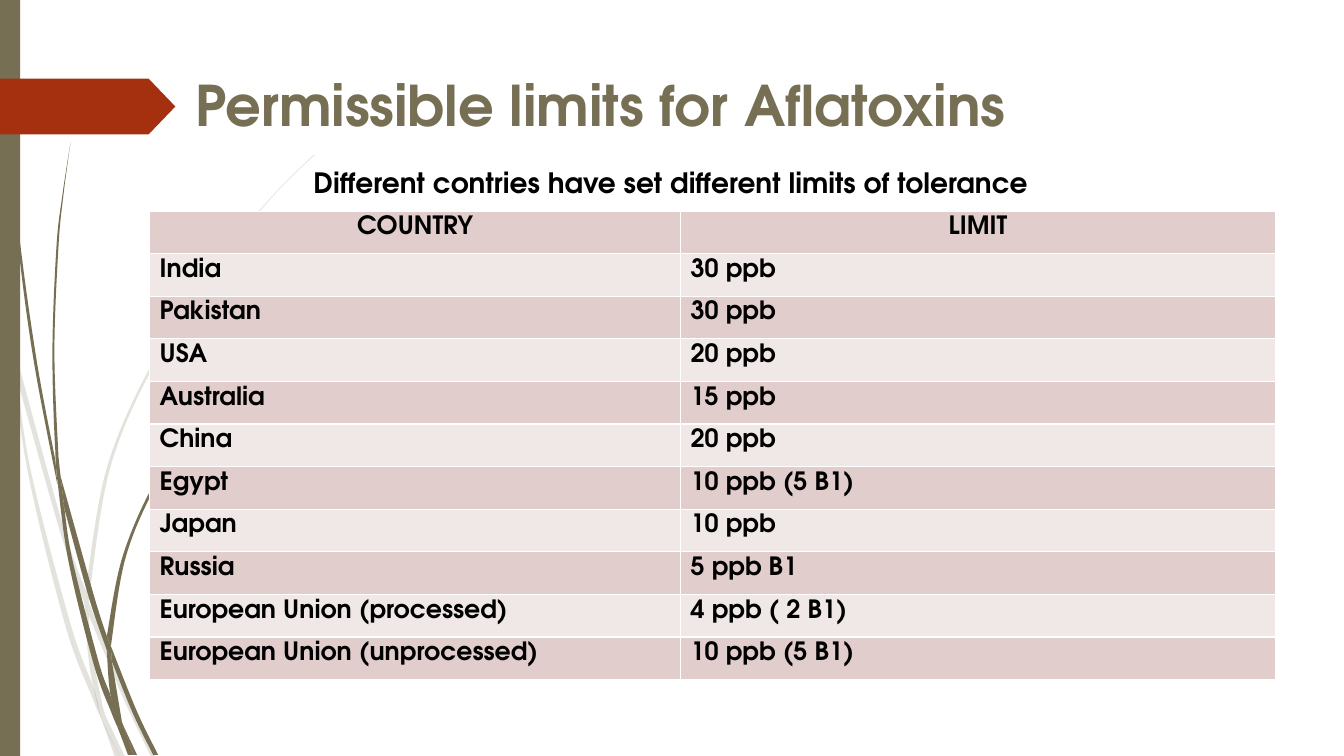
import lxml.etree
import pptx
import pptx.dml.color
import pptx.enum.shapes
import pptx.enum.text
import pptx.oxml
import pptx.oxml.ns
import pptx.util
from pptx.util import Cm

OLIVE = pptx.dml.color.RGBColor(0x76, 0x6F, 0x54)
RUST = pptx.dml.color.RGBColor(0xA5, 0x30, 0x10)
BLACK = pptx.dml.color.RGBColor(0x00, 0x00, 0x00)
ROSE = pptx.dml.color.RGBColor(0xE1, 0xCD, 0xCC)
PALE_ROSE = pptx.dml.color.RGBColor(0xF0, 0xE8, 0xE7)
FONT = "TeX Gyre Adventor"

GRASS_UNIT = Cm(0.0254)

PALE_BLADES = [
    ([(11, 350), (9, 322), (0, 282)], [(0, 299), (10, 344)]),
    ([(17, 376), (58, 522), (84, 599)], [(85, 586), (62, 520), (14, 345)]),
    ([(88, 610), (123, 694), (150, 751)], [(155, 751), (127, 692), (92, 607), (88, 596)]),
    ([(119, 751)], [(124, 751), (105, 711)]),
    ([(11, 350), (28, 470), (65, 621), (92, 693), (101, 714)],
     [(99, 707), (93, 683), (70, 619), (31, 469), (17, 376)]),
    ([(84, 599), (87, 646), (93, 683), (105, 711)], [(103, 706), (91, 646), (88, 608)]),
    ([(312, 153), (289, 175), (268, 197), (228, 244), (158, 348), (107, 461), (85, 586)],
     [(88, 596), (110, 462), (160, 349), (229, 245), (268, 198), (290, 175), (312, 154)]),
    ([(101, 714), (114, 751)], [(119, 751)]),
    ([(88, 608), (88, 596)], [(85, 586), (84, 599)]),
    ([(93, 683), (101, 714), (119, 751)], [(105, 711), (96, 692)]),
]
DARK_BLADES = [
    ([(3, 0), (4, 48), (7, 110), (17, 233), (33, 355), (57, 481)],
     [(55, 457), (36, 355), (19, 232), (8, 109), (5, 48), (4, 0)]),
    ([(64, 505), (88, 592), (106, 645)], [(106, 631), (93, 590), (60, 472)]),
    ([(111, 656), (132, 708), (152, 749)], [(157, 749), (136, 706), (110, 641)]),
    ([(57, 477), (68, 557), (93, 659), (111, 708), (117, 722)],
     [(116, 717), (110, 691), (98, 657), (72, 556), (64, 505)]),
    ([(70, 141), (62, 193), (56, 245), (52, 349), (55, 449), (60, 472)],
     [(58, 453), (54, 349), (58, 245), (63, 193), (70, 141)]),
    ([(122, 719), (133, 749)], [(136, 749)]),
    ([(55, 449), (57, 477), (64, 505)], [(60, 472)]),
    ([(260, 344), (245, 358), (231, 373), (204, 405), (156, 474), (122, 551), (106, 631)],
     [(110, 641), (125, 552), (158, 476), (205, 406), (231, 374), (245, 359), (261, 344)]),
    ([(117, 722), (127, 749)], [(131, 749)]),
    ([(106, 645), (110, 691), (122, 719)], [(121, 716), (111, 656)]),
    ([(106, 645), (111, 656)], [(110, 641), (106, 631)]),
    ([(110, 691), (117, 722), (130, 749)], [(133, 749), (122, 719), (116, 706)]),
]

LIMITS = [
    ("COUNTRY", "LIMIT"),
    ("India", "30 ppb"),
    ("Pakistan", "30 ppb"),
    ("USA", "20 ppb"),
    ("Australia", "15 ppb"),
    ("China", "20 ppb"),
    ("Egypt", "10 ppb (5 B1)"),
    ("Japan", "10 ppb"),
    ("Russia", "5 ppb B1"),
    ("European Union (processed)", "4 ppb ( 2 B1)"),
    ("European Union (unprocessed)", "10 ppb (5 B1)"),
]


def paint(shape, color):
    shape.shadow.inherit = False
    shape.fill.solid()
    shape.fill.fore_color.rgb = color
    shape.line.fill.background()


def set_opacity(shape, percent):
    color = shape.fill._xPr.find(".//" + pptx.oxml.ns.qn("a:srgbClr"))
    alpha = lxml.etree.SubElement(color, pptx.oxml.ns.qn("a:alpha"))
    alpha.set("val", str(percent * 1000))


def curve_edge(segments, points):
    padded = [points[0], *points, points[-1]]
    for segment, before, start, end, after in zip(
            segments, padded, padded[1:], padded[2:], padded[3:]):
        controls = (
            [s + (e - b) / 6 for b, s, e in zip(before, start, end)],
            [e - (a - s) / 6 for s, e, a in zip(start, end, after)])
        for position, (x, y) in enumerate(controls):
            control = lxml.etree.Element(pptx.oxml.ns.qn("a:pt"), x=str(round(x)), y=str(round(y)))
            segment.insert(position, control)
        segment.tag = pptx.oxml.ns.qn("a:cubicBezTo")


def add_blades(slide, left, top, blades, opacity):
    for first_edge, second_edge in blades:
        points = [(left + x * GRASS_UNIT, top + y * GRASS_UNIT)
                  for x, y in first_edge + second_edge]
        builder = slide.shapes.build_freeform(*points[0])
        builder.add_line_segments(points[1:], close=True)
        blade = builder.convert_to_shape()
        local = [(x - blade.left, y - blade.top) for x, y in points]
        segments = list(blade._element.iter(pptx.oxml.ns.qn("a:lnTo")))
        split = len(first_edge)
        curve_edge(segments[:split - 1], local[:split])
        curve_edge(segments[split:], local[split:])
        paint(blade, OLIVE)
        if opacity < 100:
            set_opacity(blade, opacity)


def add_side_decoration(slide, left, top, height):
    add_blades(slide, left, top, PALE_BLADES, 20)
    add_blades(slide, left, top, DARK_BLADES, 100)
    kinds = pptx.enum.shapes.MSO_SHAPE
    bar = slide.shapes.add_shape(kinds.RECTANGLE, left, top, Cm(0.51), height)
    paint(bar, OLIVE)
    tag = slide.shapes.add_shape(kinds.PENTAGON, left, top + Cm(1.98), Cm(4.42), Cm(1.41))
    tag.adjustments[0] = 0.48
    paint(tag, RUST)


def style_paragraph(paragraph, size, color):
    paragraph.font.name = FONT
    paragraph.font.size = pptx.util.Pt(size)
    paragraph.font.bold = True
    paragraph.font.color.rgb = color


def add_heading(slide, left, top, width, height, text, size, color, spacing=1.0):
    box = slide.shapes.add_textbox(left, top, width, height)
    frame = box.text_frame
    frame.word_wrap = True
    frame.auto_size = pptx.enum.text.MSO_AUTO_SIZE.SHAPE_TO_FIT_TEXT
    paragraph = frame.paragraphs[0]
    paragraph.text = text
    paragraph.line_spacing = spacing
    style_paragraph(paragraph, size, color)


def set_white_borders(cell):
    properties = cell._tc.get_or_add_tcPr()
    for position, side in enumerate(("lnL", "lnR", "lnT", "lnB")):
        border = pptx.oxml.parse_xml(
            f'<a:{side} {pptx.oxml.ns.nsdecls("a")} w="12700"><a:solidFill>'
            f'<a:srgbClr val="FFFFFF"/></a:solidFill></a:{side}>')
        properties.insert(position, border)


def add_limits_table(slide, left, top, width, height):
    table = slide.shapes.add_table(len(LIMITS), 2, left, top, width, height).table
    table.first_row = False
    table.horz_banding = False
    table.columns[0].width = Cm(13.38)
    table.columns[1].width = width - Cm(13.38)
    for row_index, values in enumerate(LIMITS):
        table.rows[row_index].height = height // len(LIMITS)
        for column_index, value in enumerate(values):
            cell = table.cell(row_index, column_index)
            cell.fill.solid()
            cell.fill.fore_color.rgb = PALE_ROSE if row_index % 2 else ROSE
            set_white_borders(cell)
            paragraph = cell.text_frame.paragraphs[0]
            paragraph.text = value
            style_paragraph(paragraph, 18, BLACK)
            if row_index == 0:
                paragraph.alignment = pptx.enum.text.PP_ALIGN.CENTER


def main():
    presentation = pptx.Presentation()
    presentation.slide_width = Cm(33.87)
    presentation.slide_height = Cm(19.05)
    slide = presentation.slides.add_slide(presentation.slide_layouts[6])
    add_side_decoration(slide, 0, 0, presentation.slide_height)
    add_heading(slide, Cm(4.67), Cm(1.65), Cm(31.42), Cm(1.96),
                "Permissible limits for Aflatoxins", 40, OLIVE)
    add_heading(slide, Cm(7.65), Cm(3.62), Cm(30.3), Cm(2.67),
                "Different contries have set different limits of tolerance", 20, BLACK, 1.5)
    add_limits_table(slide, Cm(3.77), Cm(5.32), Cm(28.37), Cm(11.81))
    presentation.save("out.pptx")


if __name__ == "__main__":
    main()
